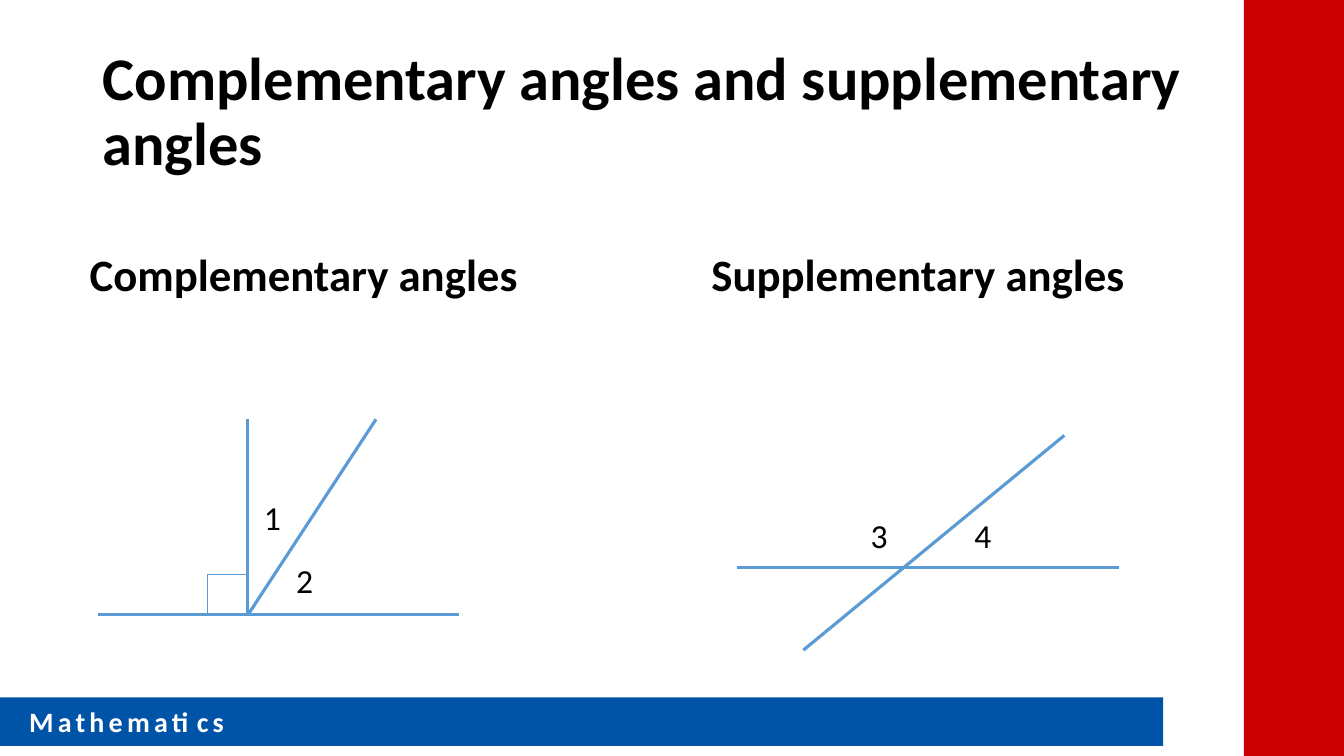
from pptx import Presentation
from pptx.dml.color import RGBColor
from pptx.enum.shapes import MSO_CONNECTOR, MSO_SHAPE
from pptx.enum.text import MSO_ANCHOR, MSO_AUTO_SIZE, PP_ALIGN
from pptx.oxml.ns import qn
from pptx.util import Pt
from lxml.etree import SubElement

# Content, with all places in points
TITLE = "Complementary angles and supplementary angles"
SUBJECT = "Mathematics"
HEADINGS = [
    ("Complementary angles", (56.9, 172.8, 395.3, 46)),
    ("Supplementary angles", (501.1, 172.8, 325.4, 46)),
]
VERTEX = (177.1, 439.2)
FIGURES = [
    {   # complementary: a right angle split by a ray
        "lines": [((69.8, 439.2), (327.6, 439.2)),
                  (VERTEX, (177.1, 299.5)),
                  (VERTEX, (268.6, 299.5))],
        "right_angle": VERTEX,
        "labels": [("1", 181.4, 351.4), ("2", 204.5, 396.7)],
    },
    {   # supplementary: a straight angle cut by a second line
        "lines": [((526.3, 405.4), (799.2, 405.4)),
                  ((573.8, 464.4), (760.3, 311))],
        "right_angle": None,
        "labels": [("3", 614.9, 364.3), ("4", 689, 364.3)],
    },
]
SQUARE = 28.8
LABEL_SIZE = (55.4, 36)

THEME = {
    "font": "Calibri",
    "black": RGBColor.from_string("000000"),
    "white": RGBColor.from_string("FFFFFF"),
    "blue": RGBColor.from_string("0054A8"),
    "red": RGBColor.from_string("CC0000"),
    "line": RGBColor.from_string("5B9BD5"),
    "title": 43.2, "heading": 32, "label": 24, "subject": 20,
    "thick": 2.25, "thin": 1,
}


def points(*values):
    return [Pt(v) for v in values]


def write(sp, text, size, color, bold=False):
    tf = sp.text_frame
    tf.word_wrap = True
    tf.text = text
    p = tf.paragraphs[0]
    p.alignment = PP_ALIGN.LEFT
    p.font.name = THEME["font"]
    p.font.size = Pt(THEME[size])
    p.font.bold = bold
    p.font.color.rgb = THEME[color]
    return p


def add_rect(shapes, box, fill=None):
    sp = shapes.add_shape(MSO_SHAPE.RECTANGLE, *points(*box))
    sp.shadow.inherit = False
    if fill:
        sp.fill.solid()
        sp.fill.fore_color.rgb = THEME[fill]
        sp.line.fill.background()
    else:
        sp.fill.background()
        sp.line.color.rgb = THEME["line"]
        sp.line.width = Pt(THEME["thin"])
    return sp


def add_line(shapes, start, end):
    ln = shapes.add_connector(MSO_CONNECTOR.STRAIGHT, *points(*start, *end))
    ln.line.color.rgb = THEME["line"]
    ln.line.width = Pt(THEME["thick"])
    SubElement(ln._element.spPr, qn("a:effectLst"))


def add_text(shapes, text, box, size, bold=False):
    write(shapes.add_textbox(*points(*box)), text, size, "black", bold)


def add_figure(slide, figure):
    shapes = slide.shapes.add_group_shape().shapes
    for start, end in figure["lines"]:
        add_line(shapes, start, end)
    if figure["right_angle"]:
        x, y = figure["right_angle"]
        add_rect(shapes, (x - SQUARE, y - SQUARE, SQUARE, SQUARE))
    for text, x, y in figure["labels"]:
        add_text(shapes, text, (x, y, *LABEL_SIZE), "label")


def main():
    prs = Presentation()
    prs.slide_width, prs.slide_height = points(960, 540)
    slide = prs.slides.add_slide(prs.slide_layouts[5])

    # Subject bar and side band
    bar = add_rect(slide.shapes, (0, 498.2, 830.9, 34.6), "blue")
    p = write(bar, SUBJECT, "subject", "white", True)
    p.runs[0].font._element.set("spc", "300")
    bar.text_frame.margin_left = Pt(20.8)
    bar.text_frame.vertical_anchor = MSO_ANCHOR.MIDDLE
    add_rect(slide.shapes, (888.5, 0, 71.5, 540), "red")

    # Title
    title = slide.shapes.title
    title.left, title.top, title.width, title.height = points(66.2, 28.8, 810.7, 104.4)
    write(title, TITLE, "title", "black", True).line_spacing = 0.9
    title.text_frame.auto_size = MSO_AUTO_SIZE.NONE
    title.text_frame.vertical_anchor = MSO_ANCHOR.MIDDLE

    # Headings and figures
    for text, box in HEADINGS:
        add_text(slide.shapes, text, box, "heading", True)
    for figure in FIGURES:
        add_figure(slide, figure)

    prs.save("out.pptx")


if __name__ == "__main__":
    main()
